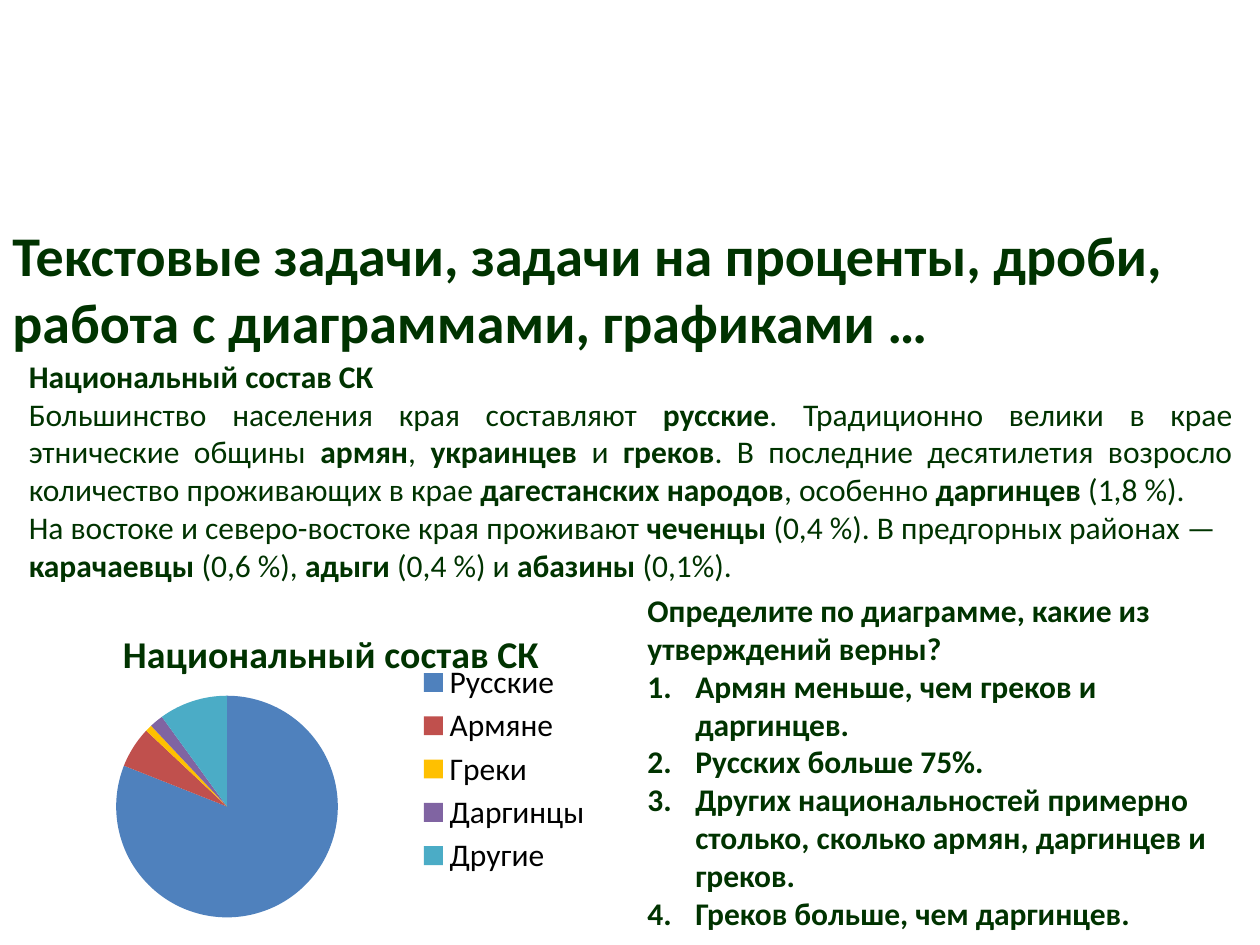
from lxml.etree import SubElement
from pptx import Presentation
from pptx.chart.data import CategoryChartData
from pptx.dml.color import RGBColor
from pptx.enum.chart import XL_CHART_TYPE, XL_LEGEND_POSITION
from pptx.enum.text import PP_ALIGN
from pptx.oxml.ns import qn
from pptx.util import Inches, Pt

COLORS = {
    "text": "003300", "legend": "000000", "Русские": "4F81BD", "Армяне": "C0504D",
    "Греки": "FFC000", "Даргинцы": "8064A2", "Другие": "4BACC6",
}
SHARES = {"Русские": 81, "Армяне": 6, "Греки": 1, "Даргинцы": 2, "Другие": 10}
HEADING = "Национальный состав СК"
TITLE = ["Текстовые задачи, задачи на проценты, дроби,", "работа с диаграммами, графиками …"]
STORY = [
    f"**{HEADING}**",
    "Большинство населения края составляют **русские**. Традиционно велики в крае "
    "этнические общины **армян**, **украинцев **и **греков**. В последние десятилетия "
    "возросло количество проживающих в крае **дагестанских народов**, особенно "
    "**даргинцев** (1,8 %).",
    "На востоке и северо-востоке края проживают **чеченцы** (0,4 %). В предгорных районах —",
    "**карачаевцы** (0,6 %), **адыги** (0,4 %) и **абазины **(0,1%).",
]
QUESTION = "Определите по диаграмме, какие из утверждений верны?"
ANSWERS = [
    "Армян меньше, чем греков и даргинцев.",
    "Русских больше 75%.",
    "Других национальностей примерно столько, сколько армян, даргинцев и греков.",
    "Греков больше, чем даргинцев.",
]


def style_font(font, size=18, color="text", bold=False):
    """Apply the deck's typeface with the given size, colour and weight."""
    font.name, font.size, font.bold = "Calibri", Pt(size), bold
    font.color.rgb = RGBColor.from_string(COLORS[color])


def write(para, text, size=18, bold=False, align=None, numbered=False):
    """Fill a paragraph, toggling bold at each double asterisk."""
    if numbered:
        properties = para._p.get_or_add_pPr()
        properties.set("marL", str(Inches(0.38)))
        properties.set("indent", str(-Inches(0.38)))
        SubElement(properties, qn("a:buFont"), typeface="+mj-lt")
        SubElement(properties, qn("a:buAutoNum"), type="arabicPeriod")
    para.alignment = align
    for number, part in enumerate(text.split("**")):
        if part:
            span = para.add_run()
            span.text = part
            style_font(span.font, size, bold=bold or number % 2 == 1)


def place(element, index, **shares):
    """Set a chart part's manual layout as shares of the chart."""
    for old in element.findall(qn("c:layout")):
        element.remove(old)
    layout = SubElement(element, qn("c:layout"))
    element.insert(index, layout)
    manual = SubElement(layout, qn("c:manualLayout"))
    if element.tag == qn("c:plotArea"):
        SubElement(manual, qn("c:layoutTarget"), val="inner")
    for axis in "xy":
        SubElement(manual, qn(f"c:{axis}Mode"), val="edge")
    for name, share in shares.items():
        SubElement(manual, qn(f"c:{name}"), val=str(share))


class Page:
    """Hold the deck and its current slide, and add elements by slide shares."""

    def __init__(self, deck):
        """Add a blank slide to the deck."""
        self.deck = deck
        self.slide = deck.slides.add_slide(deck.slide_layouts[6])

    def area(self, left, top, width, height):
        """Turn shares of the slide into lengths."""
        wide, high = self.deck.slide_width, self.deck.slide_height
        return int(left * wide), int(top * high), int(width * wide), int(height * high)

    def text(self, area, items, wrap=True):
        """Add a text box from pairs of text and format."""
        box = self.slide.shapes.add_textbox(*self.area(*area))
        frame = box.text_frame
        frame.word_wrap = wrap
        for number, (text, style) in enumerate(items):
            para = frame.add_paragraph() if number else frame.paragraphs[0]
            write(para, text, **style)

    def pie(self, area, title, shares):
        """Add a pie chart with a title and a legend on the right."""
        data = CategoryChartData()
        data.categories = list(shares)
        data.add_series(title, list(shares.values()))
        chart = self.slide.shapes.add_chart(XL_CHART_TYPE.PIE, *self.area(*area), data).chart
        style_font(chart.font, color="legend")
        chart.has_title = True
        write(chart.chart_title.text_frame.paragraphs[0], title, size=21.6, bold=True)
        chart.has_legend = True
        chart.legend.position = XL_LEGEND_POSITION.RIGHT
        chart.legend.include_in_layout = False
        style_font(chart.legend.font, color="legend")
        plot = chart.plots[0]
        plot.vary_by_categories = True
        for number, name in enumerate(shares):
            fill = plot.series[0].points[number].format.fill
            fill.solid()
            fill.fore_color.rgb = RGBColor.from_string(COLORS[name])
        place(chart.chart_title._element, 1, x=0.13, y=0.08)
        place(chart.legend._element, 1, x=0.66, y=0.19, w=0.34, h=0.65)
        place(chart._chartSpace.chart.plotArea, 0, x=0.13, y=0.3, w=0.4, h=0.65)


def main():
    """Build the slide and save the deck."""
    deck = Presentation()
    deck.slide_width, deck.slide_height = Inches(10), Inches(7.5)
    page = Page(deck)
    heading = {"size": 32, "bold": True}
    page.text((0, 0.227, 0.952, 0.157), [(line, heading) for line in TITLE], wrap=False)
    justified = {"align": PP_ALIGN.JUSTIFY}
    page.text((0.013, 0.371, 0.975, 0.256), [(line, justified) for line in STORY])
    page.pie((0.035, 0.628, 0.44, 0.361), HEADING, SHARES)
    answer = {"bold": True, "numbered": True}
    page.text((0.504, 0.619, 0.484, 0.417),
              [(QUESTION, {"bold": True})] + [(line, answer) for line in ANSWERS])
    deck.save("out.pptx")


if __name__ == "__main__":
    main()
